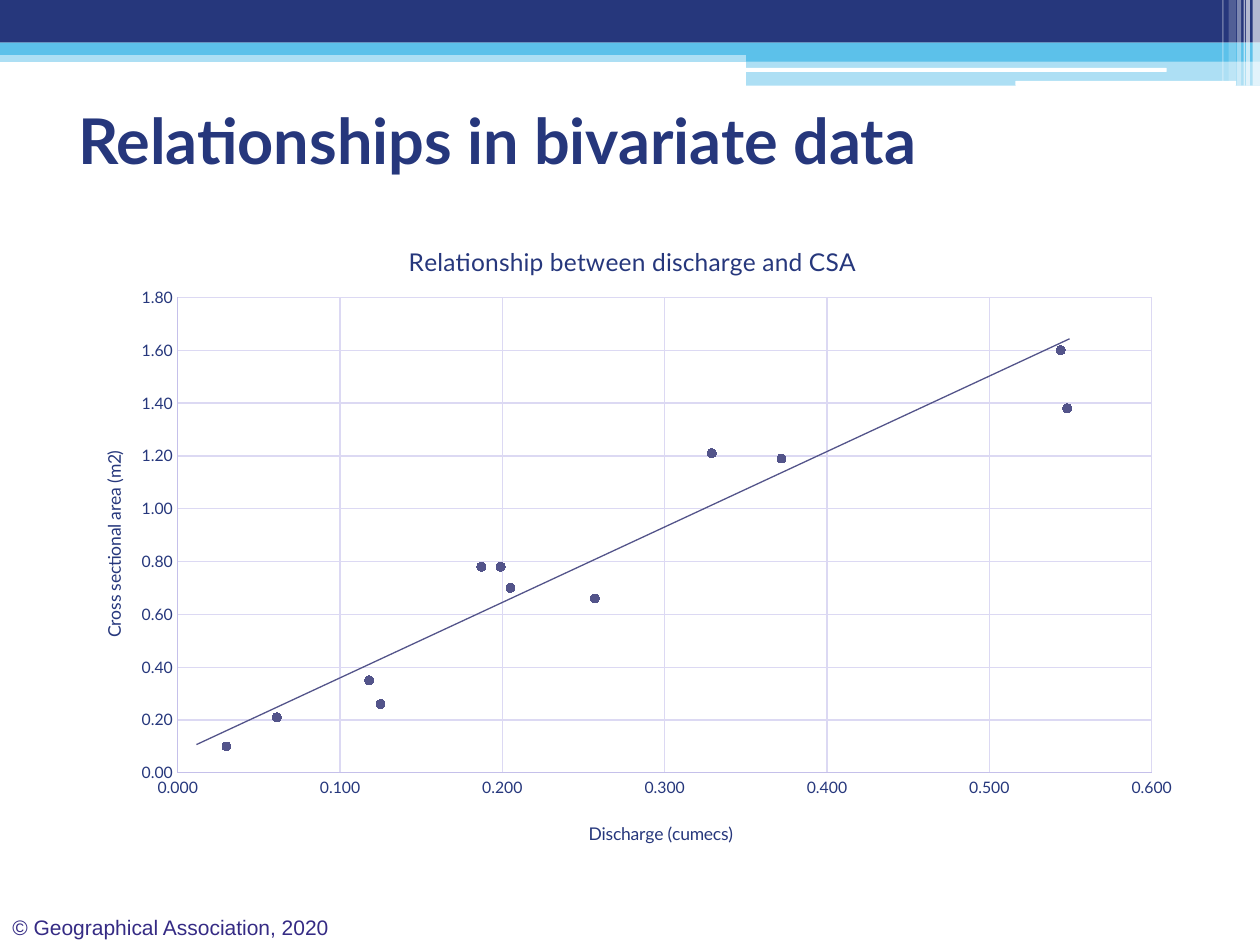
from dataclasses import dataclass

from lxml.etree import SubElement
from pptx import Presentation
from pptx.chart.data import XyChartData
from pptx.dml.color import RGBColor as RGB
from pptx.enum.chart import XL_CHART_TYPE as Kind, XL_MARKER_STYLE as Mark
from pptx.enum.chart import XL_TICK_MARK as Tick
from pptx.enum.shapes import MSO_CONNECTOR as Link, MSO_SHAPE as Shape
from pptx.enum.text import MSO_ANCHOR as Anchor, MSO_AUTO_SIZE as Fit, PP_ALIGN as Align
from pptx.oxml import parse_xml
from pptx.oxml.ns import nsdecls, qn
from pptx.util import Cm, Pt


@dataclass
class Theme:
    """Colours, fonts and type sizes of the slide."""
    navy: str = "26377C"
    sky: str = "5CC1EA"
    white: str = "FFFFFF"
    violet: str = "352B84"
    dot: str = "53548A"
    axis: str = "C5C0EA"
    grid: str = "DCD9F3"
    font: str = "Lato"
    plain: str = "Arial"
    head: int = 36
    sub: int = 14
    foot: int = 12
    label: int = 10
    tick: int = 9
    thin: float = 0.75


def style(font, size, color, name, bold=False):
    """Set the look of a font."""
    font.size, font.name, font.bold = Pt(size), name, bold
    font.color.rgb = RGB.from_string(color)


def put(frame, text, align=None, **look):
    """Write formatted text into a text frame."""
    para = frame.paragraphs[0]
    para.alignment = align
    run = para.add_run()
    run.text = text
    style(run.font, **look)


def stroke(line, color, width):
    """Set colour and width of a line."""
    line.color.rgb = RGB.from_string(color)
    line.width = Pt(width)


def place(item, at, spot, inner=False):
    """Give a chart part a fixed layout as fractions of the chart."""
    for old in item.findall(qn("c:layout")):
        item.remove(old)
    rows = '<c:layoutTarget val="inner"/>' if inner else ""
    rows += '<c:xMode val="edge"/><c:yMode val="edge"/>'
    rows += "".join(f'<c:{key} val="{val}"/>' for key, val in zip("xywh", spot))
    item.insert(at, parse_xml(
        f'<c:layout {nsdecls("c")}><c:manualLayout>{rows}</c:manualLayout></c:layout>'))


class Deck:
    """Holds the theme and the current slide."""

    def __init__(self, theme):
        """Start a deck with one titled slide."""
        self.theme = theme
        self.file = Presentation()
        self.file.slide_width, self.file.slide_height = Cm(25.4), Cm(19.05)
        self.slide = self.file.slides.add_slide(self.file.slide_layouts[5])

    def bar(self, x, y, w, h, color, alpha=100, kind=Shape.RECTANGLE):
        """Draw a filled bar without outline."""
        bar = self.slide.shapes.add_shape(kind, Cm(x), Cm(y), Cm(w), Cm(h))
        bar.shadow.inherit = False
        bar.line.fill.background()
        bar.fill.solid()
        bar.fill.fore_color.rgb = RGB.from_string(color)
        if alpha < 100:
            tone = bar.fill._xPr.find(".//" + qn("a:srgbClr"))
            SubElement(tone, qn("a:alpha")).set("val", str(alpha * 1000))

    def title(self, text, x, y, w, h):
        """Move and fill the title placeholder."""
        box, look = self.slide.shapes.title, self.theme
        box.left, box.top, box.width, box.height = Cm(x), Cm(y), Cm(w), Cm(h)
        frame = box.text_frame
        frame.auto_size, frame.vertical_anchor = Fit.NONE, Anchor.MIDDLE
        put(frame, text, align=Align.LEFT, size=look.head, color=look.navy,
            name=look.font, bold=True)

    def note(self, text, x, y, w, h):
        """Add a one-line text box."""
        look = self.theme
        box = self.slide.shapes.add_textbox(Cm(x), Cm(y), Cm(w), Cm(h))
        put(box.text_frame, text, size=look.foot, color=look.violet, name=look.plain)

    def line(self, x, y, end, top):
        """Draw a straight line."""
        line = self.slide.shapes.add_connector(
            Link.STRAIGHT, Cm(x), Cm(y), Cm(end), Cm(top))
        stroke(line.line, self.theme.dot, self.theme.thin)
        SubElement(line._element.spPr, qn("a:effectLst"))

    def axis(self, axis, text, spot, most, step, form):
        """Format one value axis and its title."""
        look = self.theme
        axis.minimum_scale, axis.maximum_scale, axis.major_unit = 0, most, step
        axis.major_tick_mark = axis.minor_tick_mark = Tick.NONE
        axis.has_major_gridlines = True
        stroke(axis.major_gridlines.format.line, look.grid, look.thin)
        stroke(axis.format.line, look.axis, look.thin)
        marks = axis.tick_labels
        marks.number_format, marks.number_format_is_linked = form, False
        style(marks.font, look.tick, look.navy, look.font)
        put(axis.axis_title.text_frame, text, size=look.label, color=look.navy,
            name=look.font)
        place(axis.axis_title._element, 1, spot)

    def scatter(self, text, points, x, y, w, h):
        """Add the scatter chart."""
        look, data = self.theme, XyChartData()
        series = data.add_series("Series 1")
        for point in points:
            series.add_data_point(*point)
        chart = self.slide.shapes.add_chart(
            Kind.XY_SCATTER, Cm(x), Cm(y), Cm(w), Cm(h), data).chart
        style(chart.font, look.label, look.violet, look.plain)
        chart.has_legend = False
        chart.has_title = True
        put(chart.chart_title.text_frame, text, size=look.sub, color=look.navy,
            name=look.font)
        place(chart.chart_title._element, 1, (0.3, 0.04))
        plot = chart.plots[0]
        plot.vary_by_categories = False
        place(chart._chartSpace.chart.plotArea, 0, (0.1, 0.13, 0.86, 0.73), inner=True)
        dots = plot.series[0]
        dots.format.line.fill.background()
        dots.marker.style, dots.marker.size = Mark.CIRCLE, 5
        dots.marker.format.fill.solid()
        dots.marker.format.fill.fore_color.rgb = RGB.from_string(look.dot)
        stroke(dots.marker.format.line, look.dot, look.thin)
        self.axis(chart.category_axis, "Discharge (cumecs)", (0.46, 0.93),
                  0.6, 0.1, "0.000")
        side = chart.value_axis
        self.axis(side, "Cross sectional area (m2)", (0.03, 0.36), 1.8, 0.2, "0.00")
        side.axis_title.text_frame._txBody.bodyPr.set("rot", "-5400000")


def main():
    """Build the slide and save it."""
    theme = Theme()
    deck = Deck(theme)
    for *spot, color, alpha in (
            (0, 1.02, 25.4, 0.23, theme.sky, 50),
            (0, 0, 25.4, 0.86, theme.navy, 100),
            (0, 0.86, 25.4, 0.25, theme.sky, 100),
            (15.04, 0.99, 10.36, 0.25, theme.sky, 100),
            (15.04, 1.22, 10.36, 0.51, theme.sky, 50)):
        deck.bar(*spot, color, alpha)
    for spot in ((15.01, 1.37, 8.51, 0.08), (20.47, 1.63, 4.45, 0.1)):
        deck.bar(*spot, theme.white, kind=Shape.ROUNDED_RECTANGLE)
    for x, w, h, alpha in (
            (25.25, 0.15, 1.73, 65), (25.12, 0.08, 1.73, 65), (25.07, 0.03, 1.73, 60),
            (24.94, 0.08, 1.73, 40), (24.77, 0.15, 1.63, 20), (24.64, 0.03, 1.63, 30)):
        deck.bar(x, 0, w, h, theme.white, alpha)
    deck.note("© Geographical Association, 2020", 0, 18.31, 7.29, 0.76)
    deck.title("Relationships in bivariate data", 1.32, 1.32, 22.86, 2.97)
    points = ((0.03, 0.1), (0.125, 0.26), (0.187, 0.78), (0.061, 0.21),
              (0.372, 1.19), (0.205, 0.7), (0.257, 0.66), (0.118, 0.35),
              (0.199, 0.78), (0.548, 1.38), (0.544, 1.6), (0.329, 1.21))
    deck.scatter("Relationship between discharge and CSA", points,
                 1.3, 4.29, 22.83, 13.13)
    deck.line(3.96, 15.01, 21.56, 6.83)
    deck.file.save("out.pptx")


if __name__ == "__main__":
    main()
